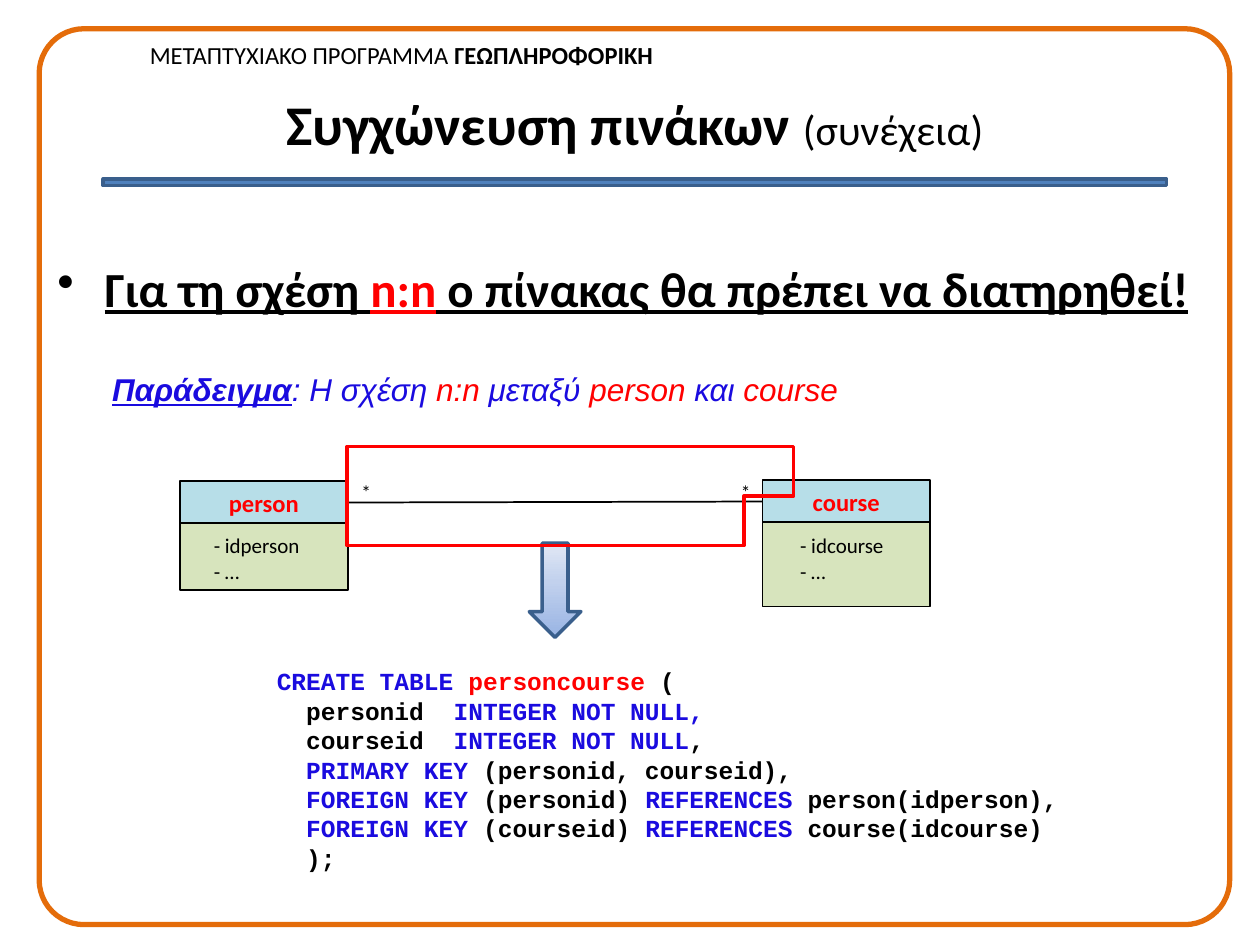
from copy import deepcopy
from pptx import Presentation
from pptx.dml.color import RGBColor
from pptx.enum.shapes import MSO_CONNECTOR as Link, MSO_SHAPE as Kind
from pptx.enum.text import MSO_ANCHOR as Anchor, PP_ALIGN as Align
from pptx.oxml.ns import qn
from pptx.util import Cm, Pt

rgb = RGBColor.from_string
BLACK, RED, BLUE, EDGE = "000000", "FF0000", "1A0BDF", "3A5F8C"

deck = Presentation()
deck.slide_width, deck.slide_height = Cm(25.4), Cm(19.05)
slide = deck.slides.add_slide(deck.slide_layouts[6])
shapes = slide.shapes


def shape(kind, x, y, w, h, fill, line, width):
    item = shapes.add_shape(kind, Cm(x), Cm(y), Cm(w), Cm(h))
    item.shadow.inherit = False
    if fill:
        item.fill.solid()
        item.fill.fore_color.rgb = rgb(fill)
    else:
        item.fill.background()
    item.line.color.rgb = rgb(line)
    item.line.width = Pt(width)
    return item


def write(item, rows, size, font="Calibri", align=Align.LEFT, wrap=True):
    """Fill a shape, or a new text box at (x, y, w, h), with rows of
    (text, colour, font settings) runs."""
    if isinstance(item, tuple):
        item = shapes.add_textbox(*[Cm(n) for n in item])
    frame = item.text_frame
    frame.word_wrap = wrap
    for i, row in enumerate(rows):
        para = frame.add_paragraph() if i else frame.paragraphs[0]
        para.alignment = align
        para.font.size, para.font.name = Pt(size), font
        for text, color, look in row:
            run = para.add_run()
            run.text = text
            run.font.color.rgb = rgb(color)
            for key, value in look.items():
                setattr(run.font, key, value)
    return frame


bold = {"bold": True}
under = {"bold": True, "underline": True}
slant = {"italic": True}

# Page frame, header and rule
write((2.77, 0.69, 10.87, 0.86),
      [[("ΜΕΤΑΠΤΥΧΙΑΚΟ ΠΡΟΓΡΑΜΜΑ ", BLACK, {}), ("ΓΕΩΠΛΗΡΟΦΟΡΙΚΗ", BLACK, bold)]],
      14, wrap=False)
shape(Kind.RECTANGLE, 2.08, 3.61, 21.44, 0.13, "4F81BD", EDGE, 2)
page = shape(Kind.ROUNDED_RECTANGLE, 0.79, 0.58, 24, 18.06, None, "E46C0A", 3)
page.adjustments[0] = 0.05

# Title
title = write((1.37, 1.27, 22.86, 2.41),
              [[("Συγχώνευση πινάκων ", BLACK, {"bold": True, "size": Pt(32)}),
                ("(συνέχεια)", BLACK, {})]], 24, align=Align.CENTER)
title.vertical_anchor = Anchor.MIDDLE

# Bulleted statement
body = write((0.91, 5.08, 24.1, 2.44), [[]], 28)
props = body.paragraphs[0]._p.get_or_add_pPr()
props.set("marL", str(Cm(0.95)))
props.set("indent", str(Cm(-0.95)))
mark = props.makeelement(qn("a:buChar"), {"char": "•"})
props.insert_element_before(mark, "a:tabLst", "a:defRPr", "a:extLst")
for text, color in [("Για τη σχέση ", BLACK), ("n:n", RED),
                    (" ο πίνακας θα πρέπει να διατηρηθεί!", BLACK)]:
    run = body.paragraphs[0].add_run()
    run.text = text
    run.font.color.rgb = rgb(color)
    run.font.bold = run.font.underline = True

# SQL code
code = [
    [("CREATE TABLE ", BLUE), ("personcourse", RED), (" (", BLACK)],
    [("  personid  ", BLACK), ("INTEGER NOT NULL,", BLUE)],
    [("  courseid  ", BLACK), ("INTEGER NOT NULL", BLUE), (",", BLACK)],
    [("  PRIMARY KEY ", BLUE), ("(personid, courseid),", BLACK)],
    [("  FOREIGN KEY ", BLUE), ("(personid) ", BLACK),
     ("REFERENCES", BLUE), (" person(idperson),", BLACK)],
    [("  FOREIGN KEY ", BLUE), ("(courseid) ", BLACK),
     ("REFERENCES", BLUE), (" course(idcourse)", BLACK)],
    [("  );", BLACK)],
]
write((5.33, 13.31, 16.46, 4.45),
      [[(text, color, bold) for text, color in row] for row in code],
      14, "Courier New")

# Entities: name, left, top, body height, text left
for name, x, y, tall, left in [("course", 15.37, 9.68, 1.7, 15.88),
                               ("person", 3.63, 9.7, 1.35, 4.06)]:
    head = shape(Kind.RECTANGLE, x, y, 3.38, 0.85, "B7DEE8", BLACK, 1)
    write(head, [[(name, RED, bold)]], 14, align=Align.CENTER)
    head.text_frame.vertical_anchor = Anchor.MIDDLE
    shape(Kind.RECTANGLE, x, y + 0.85, 3.38, tall, "D7E4BD", BLACK, 1)
    write((left, 10.62, 2.24, 1.27),
          [[("- id" + name, BLACK, {})], [("- …", BLACK, {})]], 12, wrap=False)

# Relation line with its two ends
link = shapes.add_connector(Link.STRAIGHT, Cm(7.04), Cm(10.13), Cm(15.37), Cm(10.11))
link.line.color.rgb = rgb(BLACK)
link.line.width = Pt(1)
link_props = link._element.spPr
link_props.append(link_props.makeelement(qn("a:effectLst"), {}))
for x in (14.66, 7.01):
    write((x, 9.55, 0.72, 0.74), [[("*", BLACK, {})]], 11,
          align=Align.RIGHT, wrap=False)

# Example sentence
write((2.01, 7.34, 15.65, 1.02),
      [[("Παράδειγμα", BLUE, under | slant), (": Η σχέση ", BLUE, slant),
        ("n:n", RED, slant), (" μεταξύ ", BLUE, slant), ("person", RED, slant),
        (" και ", BLUE, slant), ("course", RED, slant)]],
      18, "Arial", wrap=False)

# Arrow down to the code, with a three-stop gradient
arrow = shape(Kind.RIGHT_ARROW, 10.24, 11.38, 1.9, 1.04, None, EDGE, 2)
arrow.rotation = 90
arrow.fill.gradient()
arrow.fill.gradient_angle = 180
stops = arrow._element.spPr.find(".//" + qn("a:gsLst"))
stops.append(deepcopy(stops[-1]))
for stop, (spot, color) in zip(arrow.fill.gradient_stops, [
        (0.02, "9AB5E4"), (0.6, "C2D1ED"), (1, "E1E8F5")]):
    stop.position = spot
    stop.color.rgb = rgb(color)

# Hand-drawn loop around the relation, in cm
loop = [
    (6.91, 9.4), (6.68, 9.42), (6.63, 9.53), (6.55, 9.8), (6.58, 10.29),
    (6.65, 10.44), (6.81, 10.54), (6.96, 10.59), (7.9, 10.62), (8.23, 10.64),
    (8.66, 10.72), (12.17, 10.74), (14.35, 10.72), (14.68, 10.69),
    (14.96, 10.62), (15.24, 10.52), (15.42, 10.41), (15.6, 10.26),
    (15.7, 10.13), (15.85, 10.01), (15.88, 9.91), (15.85, 9.55),
    (15.72, 9.47), (15.34, 9.42), (14.99, 9.35), (14.76, 9.3), (14.5, 9.22),
    (13.79, 9.19), (13.23, 9.17), (11.38, 9.09), (10.44, 9.12),
    (10.21, 9.14), (9.53, 9.17), (8.99, 9.19), (8.71, 9.22), (8.46, 9.27),
    (7.42, 9.3), (7.16, 9.32),
]
pen = shapes.build_freeform(*loop[0], scale=Cm(1))
pen.add_line_segments(loop[1:], close=True)
ring = pen.convert_to_shape()
ring.shadow.inherit = False
ring.fill.background()
ring.line.color.rgb = rgb(RED)
ring.line.width = Pt(2)

deck.save("out.pptx")
